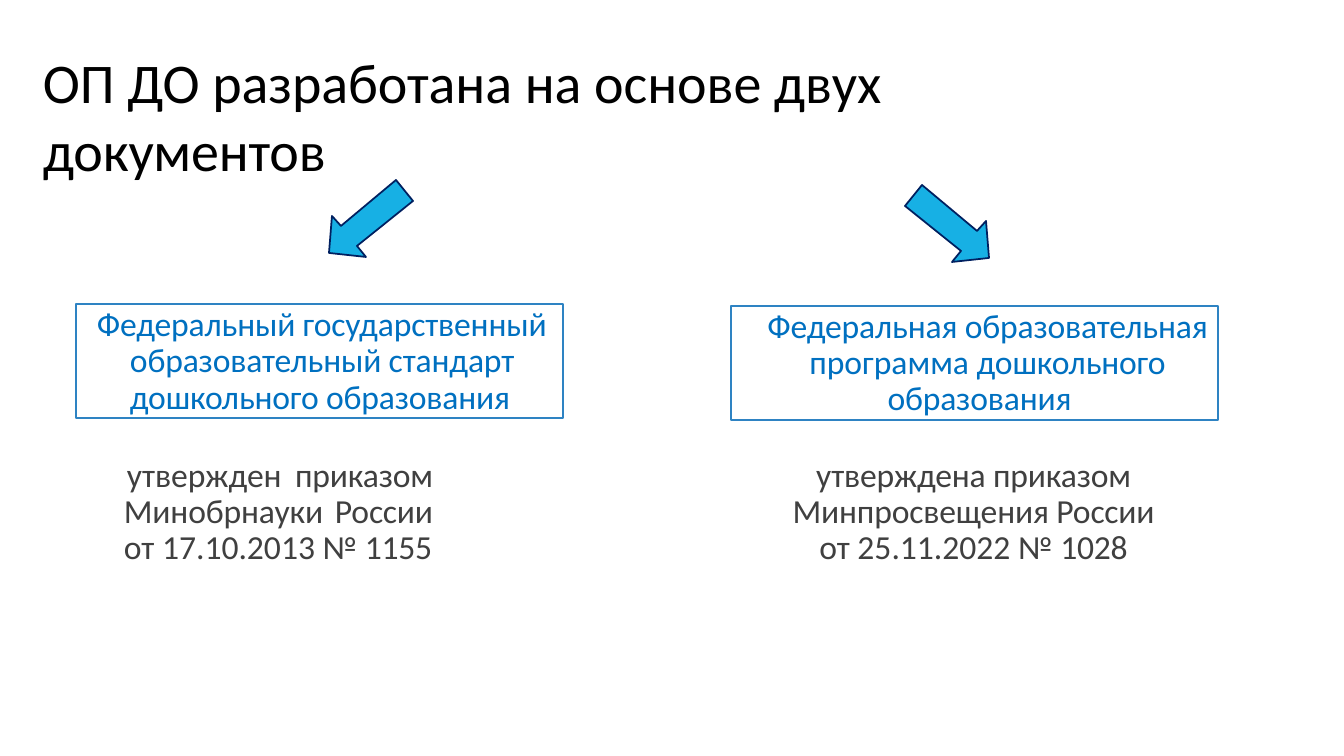
from pptx import Presentation
from pptx.dml.color import RGBColor
from pptx.enum.shapes import MSO_SHAPE
from pptx.enum.text import MSO_ANCHOR, MSO_AUTO_SIZE, PP_ALIGN
from pptx.util import Pt

PX = 914400 / 100.8
RECTANGLE = MSO_SHAPE.RECTANGLE
TOP = MSO_ANCHOR.TOP
FIT = MSO_AUTO_SIZE.SHAPE_TO_FIT_TEXT
LEFT, CENTER, JUSTIFY = PP_ALIGN.LEFT, PP_ALIGN.CENTER, PP_ALIGN.JUSTIFY
TITLE_ONLY = 5

ARROW_WIDTH = 84
ARROW_POINTS = [(67, 0), (12, 46), (3, 36), (0, 73), (37, 77), (28, 66), (84, 21)]

TITLE = [{
    "spans": [("ОП ДО разработана на основе двух ", 0), ("документов", -10)],
    "indent": (1, 0),
    "format": {"alignment": LEFT, "line_spacing": 1.0, "space_before": Pt(0.9)},
}]

BRANCHES = [
    {
        "arrow": (329, 180),
        "mirrored": False,
        "name_box": (76, 304, 487, 114),
        "name": [{
            "spans": [("Федеральный государственный образовательный стандарт "
                       "дошкольного образования", -10)],
            "indent": (54, -33),
            "format": {"alignment": LEFT, "line_spacing": Pt(25.9), "space_before": Pt(2.5)},
        }],
        "order_box": (123, 453, 310, 116),
        "order": [{
            "spans": [("утвержден ", 0), ("приказом Минобрнауки России ", -10),
                      ("от 17.10.2013 № ", 0), ("1155", -20)],
            "indent": (1, 3),
            "format": {"alignment": JUSTIFY, "line_spacing": 0.9, "space_before": Pt(3.9)},
        }],
    },
    {
        "arrow": (905, 185),
        "mirrored": True,
        "name_box": (731, 306, 487, 114),
        "name": [
            {
                "spans": [("Федеральная образовательная ", -10), ("программа ", 0),
                          ("дошкольного", -10)],
                "indent": (26, 0),
                "format": {"alignment": CENTER, "line_spacing": Pt(25.9), "space_before": Pt(2.5)},
            },
            {
                "spans": [("образования", -10)],
                "indent": (10, 0),
                "format": {"alignment": CENTER, "line_spacing": Pt(25.6), "space_before": Pt(0)},
            },
        ],
        "order_box": (789, 453, 368, 116),
        "order": [{
            "spans": [("утверждена приказом Минпросвещения России ", -10),
                      ("от 25.11.2022 № ", 0), ("1028", -20)],
            "indent": (1, 0),
            "format": {"alignment": CENTER, "line_spacing": 0.9, "space_before": Pt(3.9)},
        }],
    },
]


def px(length):
    return round(length * PX)


def color(value):
    return RGBColor.from_string(value)


def apply(target, values):
    for name, value in values.items():
        setattr(target, name, value)


def paint(shape, fill, line, width):
    shape.shadow.inherit = False
    shape.fill.solid()
    shape.fill.fore_color.rgb = color(fill)
    shape.line.color.rgb = color(line)
    shape.line.width = Pt(width)


def write(shape, paras, size, ink, inset):
    frame = shape.text_frame
    apply(frame, {
        "word_wrap": True, "auto_size": FIT, "vertical_anchor": TOP,
        "margin_left": 0, "margin_right": 0, "margin_bottom": 0, "margin_top": px(inset),
    })
    for number, content in enumerate(paras):
        para = frame.add_paragraph() if number else frame.paragraphs[0]
        apply(para, content["format"])
        margin, indent = content["indent"]
        properties = para._p.get_or_add_pPr()
        properties.set("marL", str(px(margin)))
        properties.set("indent", str(px(indent)))
        for text, spacing in content["spans"]:
            span = para.add_run()
            span.text = text
            apply(span.font, {"name": "Calibri", "size": Pt(size)})
            span.font.color.rgb = color(ink)
            span._r.get_or_add_rPr().set("spc", str(spacing))


def add_title(page, box):
    title = page.shapes.title
    apply(title, dict(zip(("left", "top", "width", "height"), map(px, box))))
    write(title, TITLE, 40, "000000", 41)


def add_arrow(page, origin, mirrored):
    left, top = origin
    points = [(left + (ARROW_WIDTH - x if mirrored else x), top + y) for x, y in ARROW_POINTS]
    builder = page.shapes.build_freeform(*points[0], scale=PX)
    builder.add_line_segments(points[1:], close=True)
    paint(builder.convert_to_shape(), "17B0E4", "002060", 1.25)


def add_branch(page, branch):
    name = page.shapes.add_shape(RECTANGLE, *map(px, branch["name_box"]))
    paint(name, "FFFFFF", "2E83C3", 1.5)
    write(name, branch["name"], 24, "0070C0", 3)
    add_arrow(page, branch["arrow"], branch["mirrored"])
    order = page.shapes.add_textbox(*map(px, branch["order_box"]))
    write(order, branch["order"], 24, "404040", 5)


def main():
    deck = Presentation()
    apply(deck, {"slide_width": px(1344), "slide_height": px(756)})
    page = deck.slides.add_slide(deck.slide_layouts[TITLE_ONLY])
    add_title(page, (42, 7, 948, 145))
    for branch in BRANCHES:
        add_branch(page, branch)
    deck.save("out.pptx")


if __name__ == "__main__":
    main()
